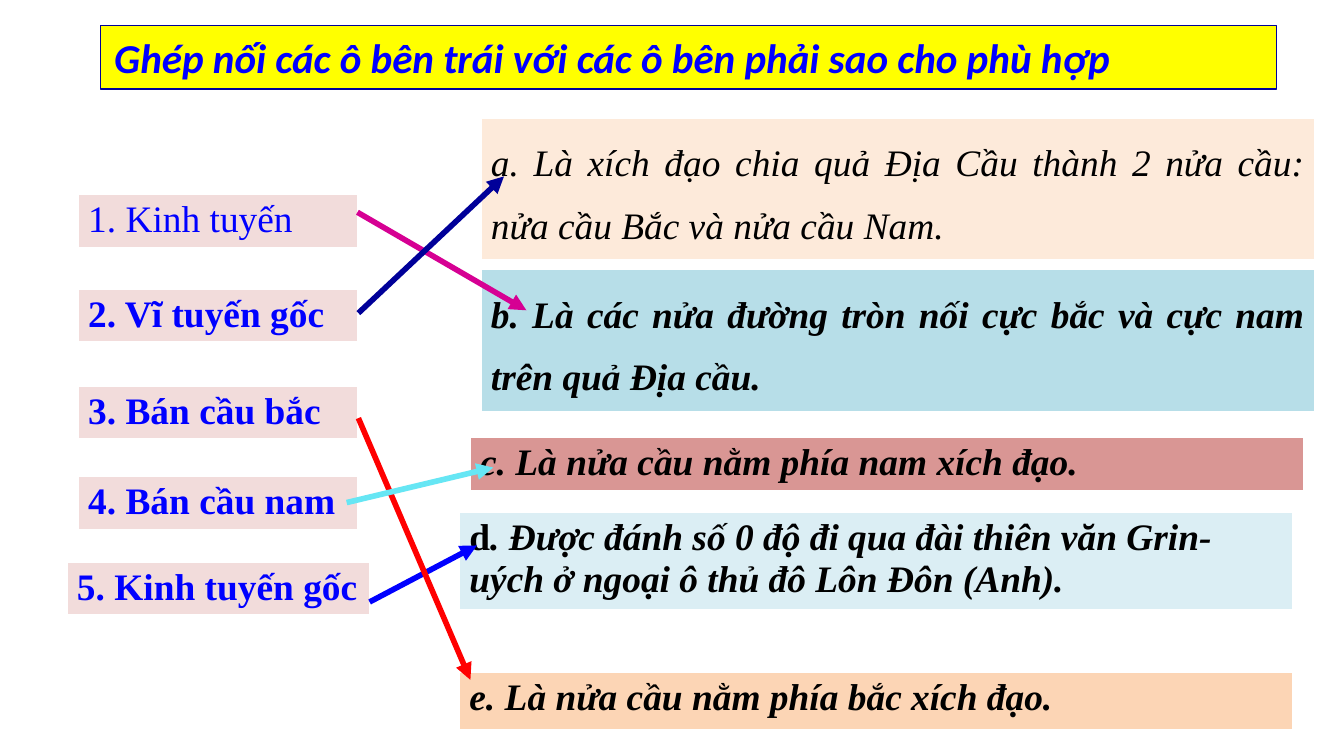
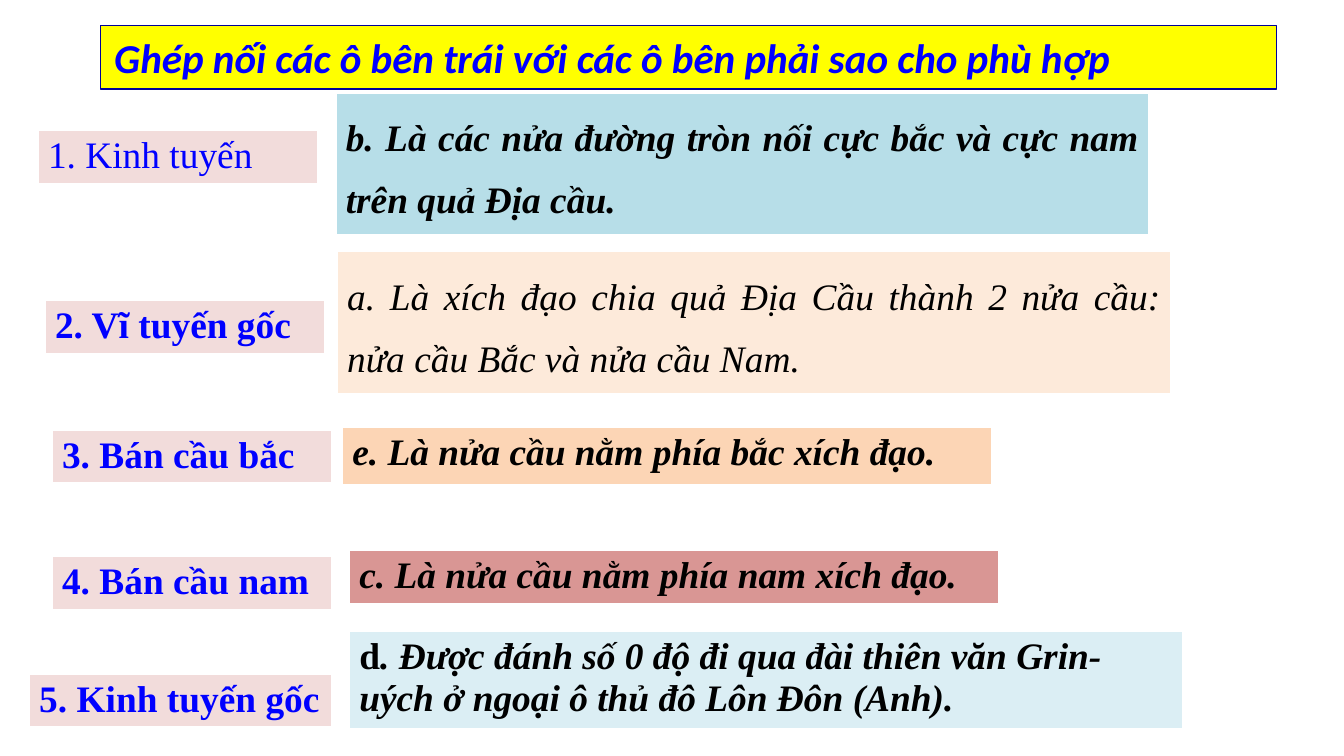
import pptx
import pptx.dml.color
import pptx.enum.shapes
import pptx.enum.text
import pptx.oxml.ns
import pptx.util
from lxml import etree

Pt = pptx.util.Pt
qn = pptx.oxml.ns.qn
Align = pptx.enum.text.PP_ALIGN


class Theme:
    title_font, body_font = "Calibri", "Times New Roman"
    title_size, body_size = 22, 20
    blue, navy, yellow = "0000FF", "000099", "FFFF00"
    black, white, term_fill = "000000", "FFFFFF", "F2DCDB"
    magenta, red, cyan = "D60093", "FF0000", "66E6F4"
    peach, teal, rose, ice, orange = "FDEADA", "B7DEE8", "D99694", "DBEEF4", "FCD5B5"
    cell_margins = (5.25, 2.6)
    borders = {"a:lnL": 1, "a:lnR": 1, "a:lnT": 1, "a:lnB": 3}


TITLE = "Ghép nối các ô bên trái với các ô bên phải sao cho phù hợp"
TITLE_BOX = (54, 13.75, 630, 34)

BOLD = {"bold": True}
ITALIC = {"italic": True}
BOTH = {"bold": True, "italic": True}
SPACED = {"alignment": Align.JUSTIFY, "line_spacing": 1.5}

# key: spans of text, height, fill, text colour, paragraph format
TERM = (29.5, Theme.term_fill, Theme.blue, {})
CARDS = {
    "1": ([("1. Kinh tuyến", {})], *TERM),
    "2": ([("2. Vĩ tuyến gốc", BOLD)], *TERM),
    "3": ([("3. Bán cầu bắc", BOLD)], *TERM),
    "4": ([("4. Bán cầu nam", BOLD)], *TERM),
    "5": ([("5. Kinh tuyến gốc", BOLD)], *TERM),
    "a": ([("a. Là xích đạo chia quả Địa Cầu thành 2 nửa cầu: nửa cầu Bắc và nửa cầu Nam.",
            ITALIC)], 77, Theme.peach, Theme.black, SPACED),
    "b": ([("b. Là các nửa đường tròn nối cực bắc và cực nam trên quả Địa cầu.", BOTH)],
          77, Theme.teal, Theme.black, SPACED),
    "c": ([("c. Là nửa cầu nằm phía nam xích đạo.", BOTH)],
          29.5, Theme.rose, Theme.black, {}),
    "d": ([("d", BOLD),
           (". Được đánh số 0 độ đi qua đài thiên văn Grin-uých ở ngoại ô thủ đô Lôn Đôn (Anh).",
            BOTH)], 53, Theme.ice, Theme.black, {}),
    "e": ([("e. Là nửa cầu nằm phía bắc xích đạo.", BOTH)],
          31.5, Theme.orange, Theme.black, {}),
}

# card: left, top, width
TERM_WIDTH, LONG_TERM, WIDE, SHORT = 149.75, 162, 446.5, 348
QUESTION = {
    "cards": {
        "1": (42, 104.25, TERM_WIDTH), "2": (42, 154.75, TERM_WIDTH),
        "3": (42, 206.75, TERM_WIDTH), "4": (42, 255, TERM_WIDTH),
        "5": (36, 301, LONG_TERM),
        "a": (257.75, 63.25, WIDE), "b": (257.75, 144.25, WIDE),
        "c": (252, 234.25, WIDE), "d": (246.25, 274.5, WIDE), "e": (246.25, 360.25, WIDE),
    },
    # start, end, colour
    "arrows": [
        ((191.5, 113.75), (282, 166.25), Theme.magenta),
        ((192, 167.75), (270, 94.5), Theme.navy),
        ((198, 322.5), (255.5, 292.25), Theme.blue),
        ((192, 224), (252, 364.25), Theme.red),
        ((185.75, 269.25), (264.25, 250.5), Theme.cyan),
    ],
}
ANSWER = {
    "cards": {
        "1": (20.5, 70, TERM_WIDTH), "2": (24.25, 160.75, TERM_WIDTH),
        "3": (28, 230.25, TERM_WIDTH), "4": (28, 298, TERM_WIDTH),
        "5": (15.75, 361, LONG_TERM),
        "a": (180.75, 134.75, WIDE), "b": (180, 49.75, 435.5),
        "c": (187.25, 294.75, SHORT), "d": (187.25, 338.25, WIDE), "e": (183.5, 229, SHORT),
    },
    "arrows": [],
}


def rgb(colour):
    return pptx.dml.color.RGBColor.from_string(colour)


def add_text(para, text, *, font=Theme.body_font, size=Theme.body_size,
             colour=Theme.black, bold=False, italic=False):
    span = para.add_run()
    span.text = text
    span.font.name, span.font.size = font, Pt(size)
    span.font.bold, span.font.italic = bold, italic
    span.font.color.rgb = rgb(colour)


def paint(fill, colour):
    fill.solid()
    fill.fore_color.rgb = rgb(colour)


def add_title(page):
    box = page.shapes.title
    box.left, box.top, box.width, box.height = map(Pt, TITLE_BOX)
    paint(box.fill, Theme.yellow)
    box.line.color.rgb = rgb(Theme.navy)
    box.line.width = Pt(0.75)
    frame = box.text_frame
    frame.word_wrap = True
    frame.auto_size = pptx.enum.text.MSO_AUTO_SIZE.NONE
    frame.vertical_anchor = pptx.enum.text.MSO_ANCHOR.MIDDLE
    para = frame.paragraphs[0]
    para.alignment = Align.LEFT
    add_text(para, TITLE, font=Theme.title_font, size=Theme.title_size,
             colour=Theme.blue, **BOTH)


def add_borders(cell):
    """Put the border lines before the fill, as the schema orders them."""
    props = cell._tc.get_or_add_tcPr()
    for place, (tag, width) in enumerate(Theme.borders.items()):
        line = etree.Element(qn(tag), w=str(Pt(width)))
        fill = etree.SubElement(line, qn("a:solidFill"))
        etree.SubElement(fill, qn("a:srgbClr"), val=Theme.white)
        props.insert(place, line)


def add_card(page, key, left, top, width):
    spans, height, fill, colour, layout = CARDS[key]
    table = page.shapes.add_table(1, 1, *map(Pt, (left, top, width, height))).table
    table.first_row = table.horz_banding = False
    cell = table.cell(0, 0)
    across, down = map(Pt, Theme.cell_margins)
    cell.margin_left = cell.margin_right = across
    cell.margin_top = cell.margin_bottom = down
    paint(cell.fill, fill)
    add_borders(cell)
    para = cell.text_frame.paragraphs[0]
    for name, value in layout.items():
        setattr(para, name, value)
    for text, style in spans:
        add_text(para, text, colour=colour, **style)


def add_arrow(page, start, end, colour):
    arrow = page.shapes.add_connector(
        pptx.enum.shapes.MSO_CONNECTOR.STRAIGHT, *map(Pt, start + end))
    arrow.line.color.rgb = rgb(colour)
    arrow.line.width = Pt(3)
    etree.SubElement(arrow.line._get_or_add_ln(), qn("a:tailEnd"), type="triangle")
    etree.SubElement(arrow._element.spPr, qn("a:effectLst"))


def main():
    deck = pptx.Presentation()
    deck.slide_width, deck.slide_height = Pt(720), Pt(405)
    title_only = deck.slide_layouts[5]
    for content in (QUESTION, ANSWER):
        page = deck.slides.add_slide(title_only)
        add_title(page)
        for key, place in content["cards"].items():
            add_card(page, key, *place)
        for arrow in content["arrows"]:
            add_arrow(page, *arrow)
    deck.save("out.pptx")


if __name__ == "__main__":
    main()
